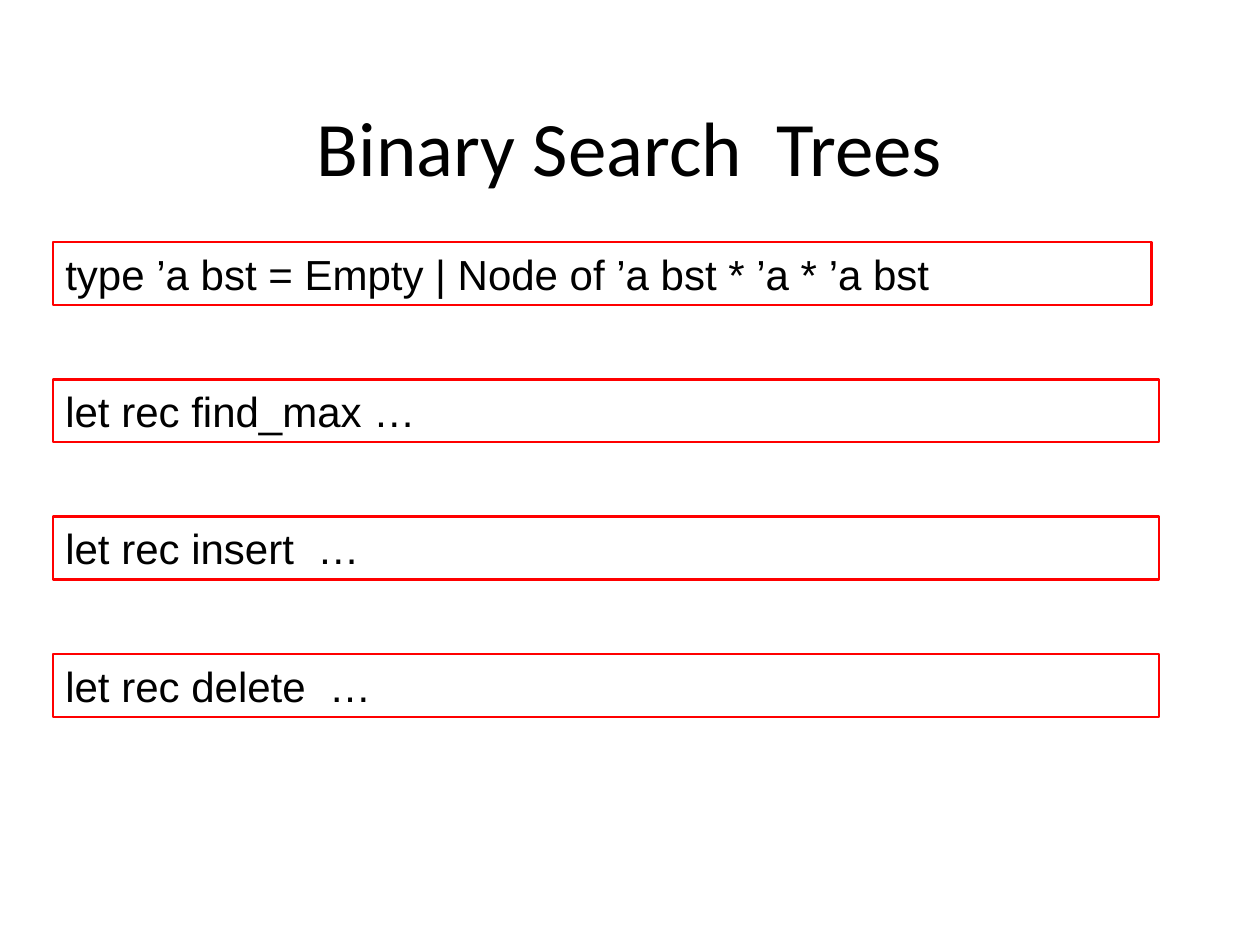
from pptx import Presentation
from pptx.dml.color import RGBColor
from pptx.enum.text import MSO_ANCHOR, PP_ALIGN
from pptx.util import Inches, Pt

BLACK = RGBColor(0x00, 0x00, 0x00)
RED = RGBColor(0xFF, 0x00, 0x00)
CENTER, LEFT = PP_ALIGN.CENTER, PP_ALIGN.LEFT
MIDDLE, TOP = MSO_ANCHOR.MIDDLE, MSO_ANCHOR.TOP

BOX_LEFT, BOX_TOP, BOX_HEIGHT, ROW_PITCH = 0.42, 1.92, 0.5, 1.09
TYPE_WIDTH, FUNCTION_WIDTH = 8.72, 8.78
TYPE_CODE = "type ’a bst = Empty | Node of ’a bst * ’a * ’a bst"
FUNCTIONS = ["let rec find_max …", "let rec insert  …", "let rec delete  …"]


def set_text(sp, text, font, size, align, anchor):
    """Write one formatted line of text into a shape."""
    tf = sp.text_frame
    tf.text = text
    tf.word_wrap = True
    tf.vertical_anchor = anchor
    p = tf.paragraphs[0]
    p.alignment = align
    r = p.runs[0]
    r.font.name = font
    r.font.size = Pt(size)
    r.font.color.rgb = BLACK


def add_title(slide, text):
    """Place and fill the title placeholder."""
    sp = slide.shapes.title
    sp.left, sp.top = Inches(0.5), Inches(0.53)
    sp.width, sp.height = Inches(9), Inches(1.25)
    set_text(sp, text, "Calibri", 44, CENTER, MIDDLE)


def add_code_box(slide, row, width, code):
    """Add a red-outlined line of code on the given row."""
    sp = slide.shapes.add_textbox(
        Inches(BOX_LEFT), Inches(BOX_TOP + row * ROW_PITCH),
        Inches(width), Inches(BOX_HEIGHT))
    sp.line.color.rgb = RED
    sp.line.width = Pt(1.5)
    set_text(sp, code, "Arial", 24, LEFT, TOP)


def main():
    """Build the slide and save it."""
    prs = Presentation()
    prs.slide_width, prs.slide_height = Inches(10), Inches(7.5)
    slide = prs.slides.add_slide(prs.slide_layouts[5])
    add_title(slide, "Binary Search  Trees")
    add_code_box(slide, 0, TYPE_WIDTH, TYPE_CODE)
    for row, code in enumerate(FUNCTIONS, start=1):
        add_code_box(slide, row, FUNCTION_WIDTH, code)
    prs.save("out.pptx")


if __name__ == "__main__":
    main()
